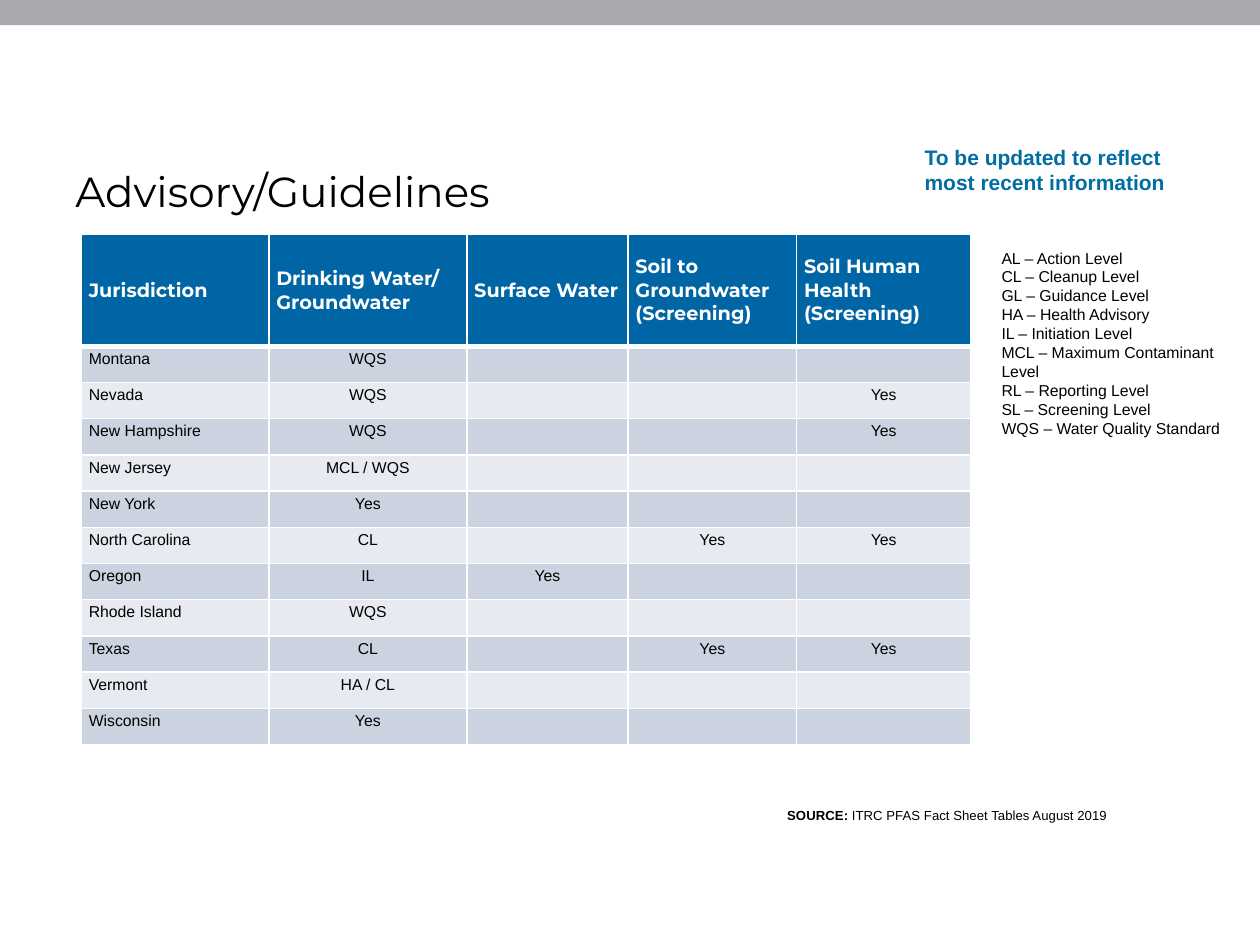
from lxml import etree
from pptx import Presentation
from pptx.dml.color import RGBColor
from pptx.enum.shapes import MSO_SHAPE
from pptx.enum.text import MSO_ANCHOR, PP_ALIGN
from pptx.oxml.ns import qn
from pptx.util import Cm, Pt

RECTANGLE = MSO_SHAPE.RECTANGLE
TOP, MIDDLE = MSO_ANCHOR.TOP, MSO_ANCHOR.MIDDLE
LEFT, CENTER = PP_ALIGN.LEFT, PP_ALIGN.CENTER

THEME = {
    "heading_font": "Montserrat", "body_font": "Arial",
    "black": "000000", "white": "FFFFFF", "bar": "A7A9AC",
    "header": "0065A4", "notice": "006DA3", "bands": ("CCD3E0", "E7EAF0"),
    "title_size": 24, "notice_size": 12, "header_size": 11,
    "body_size": 9, "source_size": 7.5,
    "border": 1, "header_border": 3,
}

TITLE = "Advisory/Guidelines"
NOTICE = "To be updated to reflect most recent information"
SOURCE = [("SOURCE: ", True), ("ITRC PFAS Fact Sheet Tables August 2019", False)]
ABBREVIATIONS = [
    "AL – Action Level",
    "CL – Cleanup Level",
    "GL – Guidance Level",
    "HA – Health Advisory",
    "IL – Initiation Level",
    "MCL – Maximum Contaminant Level",
    "RL – Reporting Level",
    "SL – Screening Level",
    "WQS – Water Quality Standard",
]
HEADERS = [
    "Jurisdiction",
    "Drinking Water/\nGroundwater",
    "Surface Water",
    "Soil to Groundwater (Screening)",
    "Soil Human Health (Screening)",
]
ROWS = [
    ("Montana", "WQS", "", "", ""),
    ("Nevada", "WQS", "", "", "Yes"),
    ("New Hampshire", "WQS", "", "", "Yes"),
    ("New Jersey", "MCL / WQS", "", "", ""),
    ("New York", "Yes", "", "", ""),
    ("North Carolina", "CL", "", "Yes", "Yes"),
    ("Oregon", "IL", "Yes", "", ""),
    ("Rhode Island", "WQS", "", "", ""),
    ("Texas", "CL", "", "Yes", "Yes"),
    ("Vermont", "HA / CL", "", "", ""),
    ("Wisconsin", "Yes", "", "", ""),
]
COLUMN_WIDTHS = [3.78, 3.99, 3.25, 3.4, 3.51]
HEADER_HEIGHT, ROW_HEIGHT = 2.25, 0.73


def write_text(frame, text, size, font="body_font", color=THEME["black"],
               bold=False, align=LEFT, anchor=TOP):
    frame.word_wrap = True
    frame.vertical_anchor = anchor
    lines = [[(line, bold)] for line in text.split("\n")] if isinstance(text, str) else [text]
    for index, runs in enumerate(lines):
        paragraph = frame.paragraphs[0] if index == 0 else frame.add_paragraph()
        paragraph.alignment = align
        paragraph.font.size = Pt(size)
        for content, is_bold in runs:
            if not content:
                continue
            run = paragraph.add_run()
            run.text = content
            run.font.size = Pt(size)
            run.font.name = THEME[font]
            run.font.bold = is_bold
            run.font.color.rgb = RGBColor.from_string(color)


def add_text(slide, box, text, size, **style):
    shape = slide.shapes.add_textbox(*map(Cm, box))
    write_text(shape.text_frame, text, size, **style)


def set_borders(cell, bottom, top):
    properties = cell._tc.get_or_add_tcPr()
    widths = {"a:lnL": THEME["border"], "a:lnR": THEME["border"], "a:lnT": top, "a:lnB": bottom}
    for index, (tag, width) in enumerate(widths.items()):
        line = etree.Element(qn(tag), w=str(Pt(width)))
        fill = etree.SubElement(line, qn("a:solidFill"))
        etree.SubElement(fill, qn("a:srgbClr"), val=THEME["white"])
        properties.insert(index, line)


def add_guideline_table(slide):
    heights = [HEADER_HEIGHT] + [ROW_HEIGHT] * len(ROWS)
    table = slide.shapes.add_table(
        len(heights), len(HEADERS), Cm(1.64), Cm(4.73),
        Cm(sum(COLUMN_WIDTHS)), Cm(sum(heights))).table
    for column, width in zip(table.columns, COLUMN_WIDTHS):
        column.width = Cm(width)
    for row, height in zip(table.rows, heights):
        row.height = Cm(height)
    for row_index, values in enumerate([HEADERS, *ROWS]):
        is_header = row_index == 0
        background = THEME["header"] if is_header else THEME["bands"][(row_index - 1) % 2]
        for column_index, value in enumerate(values):
            cell = table.cell(row_index, column_index)
            cell.fill.solid()
            cell.fill.fore_color.rgb = RGBColor.from_string(background)
            cell.margin_left = cell.margin_right = Cm(0.15)
            cell.margin_top = cell.margin_bottom = Cm(0.08)
            if is_header:
                write_text(cell.text_frame, value, THEME["header_size"], font="heading_font",
                           color=THEME["white"], bold=True)
            else:
                write_text(cell.text_frame, value, THEME["body_size"],
                           align=CENTER if column_index else LEFT)
            cell.vertical_anchor = MIDDLE if is_header else TOP
            set_borders(cell,
                        bottom=THEME["header_border" if is_header else "border"],
                        top=THEME["header_border" if row_index == 1 else "border"])


def main():
    presentation = Presentation()
    presentation.slide_width, presentation.slide_height = Cm(25.4), Cm(19.05)
    slide = presentation.slides.add_slide(presentation.slide_layouts[6])

    bar = slide.shapes.add_shape(RECTANGLE, 0, 0, presentation.slide_width, Cm(0.51))
    bar.shadow.inherit = False
    bar.fill.solid()
    bar.fill.fore_color.rgb = RGBColor.from_string(THEME["bar"])
    bar.line.fill.background()

    add_text(slide, (1.27, 2.95, 22.66, 1.78), TITLE, THEME["title_size"],
             font="heading_font", anchor=MIDDLE)
    add_guideline_table(slide)
    add_text(slide, (18.39, 2.79, 5.54, 1.27), NOTICE, THEME["notice_size"],
             color=THEME["notice"], bold=True)
    add_text(slide, (15.62, 16.15, 8.28, 0.58), SOURCE, THEME["source_size"])
    add_text(slide, (19.94, 4.88, 5.03, 4.11), "\n".join(ABBREVIATIONS), THEME["body_size"])

    presentation.save("out.pptx")


if __name__ == "__main__":
    main()
